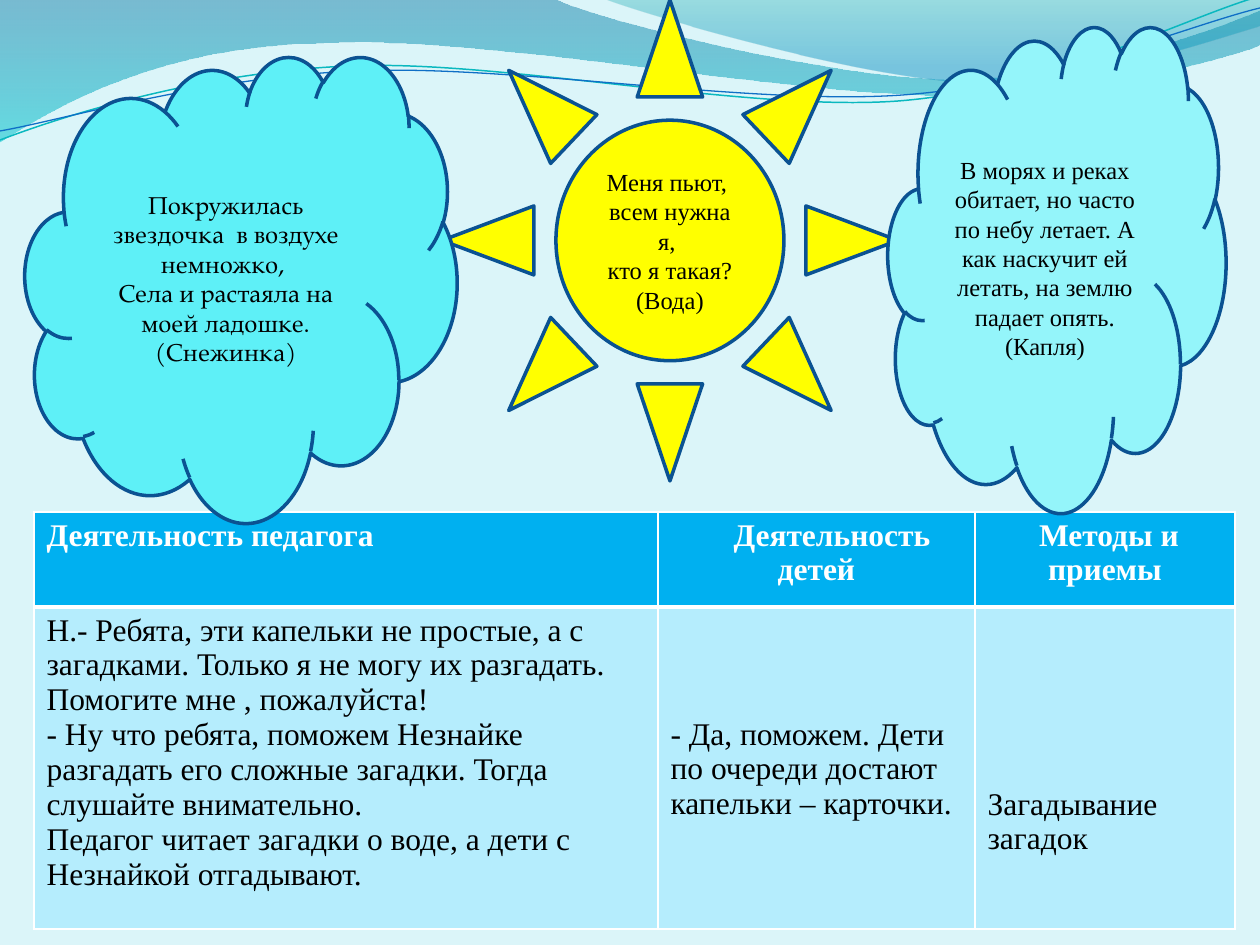
from lxml.etree import SubElement
from pptx import Presentation
from pptx.dml.color import RGBColor
from pptx.enum.shapes import MSO_SHAPE
from pptx.enum.text import MSO_ANCHOR, PP_ALIGN
from pptx.oxml.ns import qn
from pptx.util import Pt

PX = 914400 / 126
WHITE = RGBColor(0xFF, 0xFF, 0xFF)
BLACK = RGBColor(0x00, 0x00, 0x00)
BACKGROUND = RGBColor(0xDB, 0xF5, 0xF9)
OUTLINE = RGBColor(0x0B, 0x52, 0x92)
SUN_YELLOW = RGBColor(0xFF, 0xFF, 0x00)
DROP_CLOUD = RGBColor(0x94, 0xF5, 0xFA)
SNOW_CLOUD = RGBColor(0x5E, 0xF0, 0xF7)
HEADER_BLUE = RGBColor(0x00, 0xB0, 0xF0)
BODY_BLUE = RGBColor(0xB5, 0xED, 0xFD)
WAVE_BLUE = RGBColor(0x00, 0x74, 0xA1)
WAVE_CYAN = RGBColor(0x00, 0xC6, 0xCF)
CREST_TEAL = RGBColor(0x00, 0xA1, 0xA9)
CREST_BLUE = RGBColor(0x00, 0x8B, 0xBF)
LINE_TEAL = RGBColor(0x0A, 0xB8, 0xBF)
LINE_BLUE = RGBColor(0x0F, 0x6F, 0xC6)
SERIF = "Times New Roman"


def emu(pixels):
    return round(pixels * PX)


def write_text(frame, lines, formats, alignment):
    frame.word_wrap = True
    for index, line in enumerate(lines):
        paragraph = frame.paragraphs[0] if index == 0 else frame.add_paragraph()
        paragraph.alignment = alignment
        run = paragraph.add_run()
        run.text = line
        for name, value in formats.items():
            if name == "color":
                run.font.color.rgb = value
            else:
                setattr(run.font, name, value)


presentation = Presentation()
presentation.slide_width = emu(1260)
presentation.slide_height = emu(945)
slide = presentation.slides.add_slide(presentation.slide_layouts[6])
slide.background.fill.solid()
slide.background.fill.fore_color.rgb = BACKGROUND

wave = [(0, 0), (554, -1), (600, 21, 837, 79, 955, 79),
        (1075, 79, 1207, 33, 1260, 11), (1261, 45),
        (1239, 55, 1096, 96, 940, 95), (784, 95, 481, 35, 324, 43),
        (163, 45, 58, 105, -1, 142)]
crest = [(604, -1), (641, 14, 859, 78, 969, 82),
         (1079, 87, 1211, 40, 1260, 26), (1260, 0)]
teal_line = [(0, 140), (60, 117, 199, 72, 349, 66),
             (498, 59, 747, 112, 898, 101), (1050, 89, 1182, 19, 1257, -3)]
blue_line = [(0, 131), (59, 121, 207, 77, 357, 71),
             (508, 64, 752, 106, 903, 95), (1053, 84, 1186, 26, 1260, 8)]
ribbons = [
    (wave, [(0, WAVE_BLUE, 45), (1, WAVE_CYAN, 55)], None, None),
    (crest, [(0, CREST_TEAL, 30), (0.8, CREST_BLUE, 45)], None, None),
    (teal_line, None, LINE_TEAL, 0.85),
    (blue_line, None, LINE_BLUE, 0.75),
]
for segments, gradient, line_color, line_width in ribbons:
    corners = [(emu(segment[-2]), emu(segment[-1])) for segment in segments]
    builder = slide.shapes.build_freeform(*corners[0], scale=1.0)
    builder.add_line_segments(corners[1:], close=gradient is not None)
    shape = builder.convert_to_shape()
    shape.shadow.inherit = False
    edges = shape._element.xpath(".//a:lnTo")
    for edge, segment in zip(edges, segments[1:]):
        if len(segment) == 6:
            curve = edge.makeelement(qn("a:cubicBezTo"))
            for x, y in zip(segment[::2], segment[1::2]):
                SubElement(curve, qn("a:pt"), x=str(emu(x) - shape.left),
                           y=str(emu(y) - shape.top))
            edge.getparent().replace(edge, curve)
    if gradient:
        shape.line.fill.background()
        shape.fill.gradient()
        shape.fill.gradient_angle = 270
        for stop, (position, color, opacity) in zip(shape.fill.gradient_stops, gradient):
            stop.position = position
            stop.color.rgb = color
        colors = shape._element.xpath(".//a:gradFill//a:srgbClr")
        for element, (position, color, opacity) in zip(colors, gradient):
            SubElement(element, qn("a:alpha"), val=str(opacity * 1000))
    else:
        shape.fill.background()
        shape.line.color.rgb = line_color
        shape.line.width = Pt(line_width)

column_widths = [624, 317, 260]
row_heights = [95, 322]
rows = [
    [(["Деятельность педагога"], PP_ALIGN.LEFT, 0, 6),
     (["Деятельность детей"], PP_ALIGN.CENTER, 31, 6),
     (["Методы и приемы"], PP_ALIGN.CENTER, 8, 6)],
    [(["Н.- Ребята, эти капельки не простые, а с загадками. Только я не могу их "
       "разгадать. Помогите мне , пожалуйста!",
       "- Ну что ребята, поможем Незнайке разгадать его сложные загадки. "
       "Тогда слушайте внимательно.",
       "Педагог читает загадки о воде, а дети с Незнайкой отгадывают."],
      PP_ALIGN.LEFT, 0, 6),
     (["- Да, поможем. Дети по очереди достают капельки – карточки."],
      PP_ALIGN.LEFT, 0, 110),
     (["Загадывание загадок"], PP_ALIGN.LEFT, 0, 180)],
]
table = slide.shapes.add_table(2, 3, emu(34), emu(512), emu(sum(column_widths)),
                               emu(sum(row_heights))).table
table.horz_banding = False
for column, width in zip(table.columns, column_widths):
    column.width = emu(width)
for row, height in zip(table.rows, row_heights):
    row.height = emu(height)
for row_index, row in enumerate(rows):
    header = row_index == 0
    formats = {"name": SERIF, "size": Pt(18), "bold": header,
               "color": WHITE if header else BLACK}
    for column_index, (lines, alignment, indent, margin) in enumerate(row):
        cell = table.cell(row_index, column_index)
        cell.margin_top = emu(margin)
        properties = cell._tc.get_or_add_tcPr()
        for side in ("lnL", "lnR", "lnT", "lnB"):
            thick = (side == "lnB" and header) or (side == "lnT" and not header)
            border = SubElement(properties, qn("a:" + side), w=str(Pt(3 if thick else 1)))
            SubElement(SubElement(border, qn("a:solidFill")), qn("a:srgbClr"), val=str(WHITE))
        cell.fill.solid()
        cell.fill.fore_color.rgb = HEADER_BLUE if header else BODY_BLUE
        write_text(cell.text_frame, lines, formats, alignment)
        if indent:
            paragraph = cell.text_frame.paragraphs[0]
            paragraph._p.get_or_add_pPr().set("indent", str(emu(indent)))

riddles = [
    (MSO_SHAPE.SUN, (442, 0, 456, 481), SUN_YELLOW, SERIF,
     ["Меня пьют, ", "всем нужна я, ", "кто я такая?", "(Вода)"]),
    (MSO_SHAPE.CLOUD, (888, 26, 338, 486), DROP_CLOUD, SERIF,
     ["В морях и реках обитает, но часто по небу летает. А как наскучит ей "
      "летать, на землю падает опять. (Капля)"]),
    (MSO_SHAPE.CLOUD, (25, 56, 432, 466), SNOW_CLOUD, "TeX Gyre Pagella",
     ["Покружилась звездочка  в воздухе немножко, ",
      "Села и растаяла на моей ладошке.", "(Снежинка)"]),
]
for preset, box, fill_color, font_name, lines in riddles:
    shape = slide.shapes.add_shape(preset, *[emu(length) for length in box])
    shape.shadow.inherit = False
    shape.fill.solid()
    shape.fill.fore_color.rgb = fill_color
    shape.line.color.rgb = OUTLINE
    shape.line.width = Pt(2)
    shape.text_frame.vertical_anchor = MSO_ANCHOR.MIDDLE
    formats = {"name": font_name, "size": Pt(14), "color": BLACK}
    write_text(shape.text_frame, lines, formats, PP_ALIGN.CENTER)

presentation.save("out.pptx")
